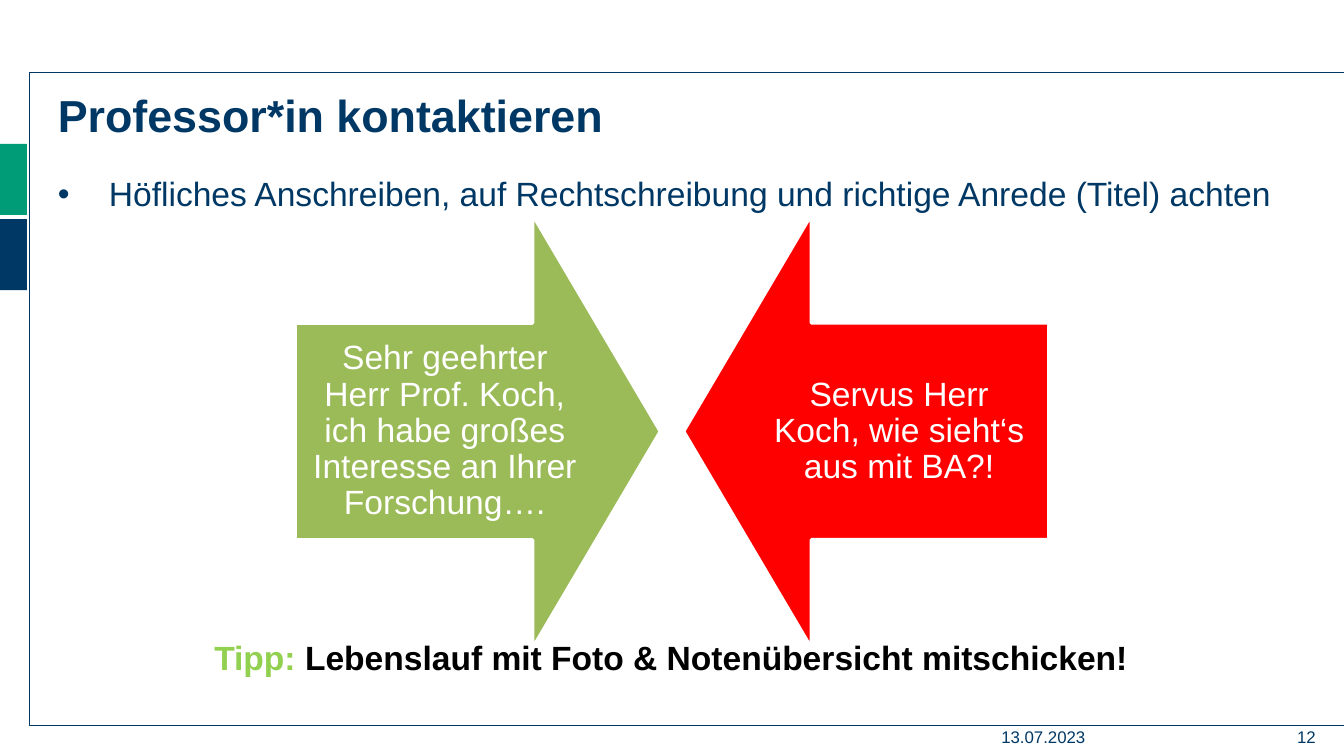
from dataclasses import dataclass

from lxml import etree
from pptx import Presentation
from pptx.dml.color import RGBColor
from pptx.enum import shapes, text
from pptx.oxml import ns
from pptx.util import Inches, Pt


@dataclass(frozen=True)
class Theme:
    font: str = "Arial"
    navy: str = "003865"
    teal: str = "009B77"
    green: str = "9BBB59"
    red: str = "FF0000"
    tip_green: str = "92D050"
    white: str = "FFFFFF"
    black: str = "000000"
    title_size: int = 24
    text_size: int = 18
    footer_size: int = 9


theme = Theme()


def format_text(shape, size, color, bold=False, align=text.PP_ALIGN.LEFT,
                anchor=text.MSO_ANCHOR.TOP, margin=0):
    frame = shape.text_frame
    frame.word_wrap = True
    frame.auto_size = text.MSO_AUTO_SIZE.NONE
    frame.vertical_anchor = anchor
    frame.margin_left = frame.margin_right = Inches(margin)
    frame.margin_top = frame.margin_bottom = Inches(margin)
    for paragraph in frame.paragraphs:
        paragraph.alignment = align
        paragraph.space_before = Pt(0)
        for run in paragraph.runs:
            run.font.name = theme.font
            run.font.size = Pt(size)
            run.font.bold = bold
            run.font.color.rgb = RGBColor.from_string(color)


def place(shape, left, top, width, height):
    shape.left, shape.top = Inches(left), Inches(top)
    shape.width, shape.height = Inches(width), Inches(height)


presentation = Presentation()
presentation.slide_width = Inches(10)
presentation.slide_height = Inches(10 * 9 / 16)
slide = presentation.slides.add_slide(presentation.slide_layouts[1])

# Side blocks and frame
for top, color in ((1.63, theme.navy), (1.07, theme.teal)):
    block = slide.shapes.add_shape(shapes.MSO_SHAPE.RECTANGLE, Inches(0), Inches(top),
                                   Inches(0.2), Inches(0.53))
    block.shadow.inherit = False
    block.fill.solid()
    block.fill.fore_color.rgb = RGBColor.from_string(color)
    block.line.fill.background()

builder = slide.shapes.build_freeform(Inches(10), Inches(0.54))
builder.add_line_segments([(Inches(0.22), Inches(0.54)), (Inches(0.22), Inches(5.4)),
                           (Inches(10), Inches(5.4))], close=False)
frame_line = builder.convert_to_shape()
frame_line.shadow.inherit = False
frame_line.fill.background()
frame_line.line.color.rgb = RGBColor.from_string(theme.navy)
frame_line.line.width = Pt(0.75)

# Title and bullet
title = slide.shapes.title
place(title, 0.43, 0.65, 9.3, 0.45)
title.text_frame.text = "Professor*in kontaktieren"
format_text(title, theme.title_size, theme.navy, bold=True)

body = slide.placeholders[1]
place(body, 0.43, 1.29, 9.3, 0.4)
body.text_frame.text = ("Höfliches Anschreiben, auf Rechtschreibung und "
                        "richtige Anrede (Titel) achten")
properties = body.text_frame.paragraphs[0]._p.get_or_add_pPr()
properties.set("marL", str(Inches(0.38)))
properties.set("indent", str(-Inches(0.38)))
etree.SubElement(properties, ns.qn("a:buChar")).set("char", "•")
format_text(body, theme.text_size, theme.navy)

# Good and bad example as opposing arrows
examples = (
    (1.94, 270, theme.green, 2.19,
     "Sehr geehrter Herr Prof. Koch, ich habe großes Interesse an Ihrer Forschung…."),
    (4.83, 90, theme.red, 5.57, "Servus Herr Koch, wie sieht‘s aus mit BA?!"),
)
for arrow_left, rotation, color, text_left, wording in examples:
    arrow = slide.shapes.add_shape(shapes.MSO_SHAPE.DOWN_ARROW, Inches(arrow_left),
                                   Inches(1.85), Inches(3.23), Inches(2.72))
    arrow.rotation = rotation
    arrow.adjustments[0], arrow.adjustments[1] = 0.5, 0.35
    arrow.shadow.inherit = False
    arrow.fill.solid()
    arrow.fill.fore_color.rgb = RGBColor.from_string(color)
    arrow.line.color.rgb = RGBColor.from_string(theme.white)
    arrow.line.width = Pt(2)

    example = slide.shapes.add_textbox(Inches(text_left), Inches(2.4),
                                       Inches(2.24), Inches(1.62))
    example.text_frame.text = wording
    format_text(example, theme.text_size, theme.white, align=text.PP_ALIGN.CENTER,
                anchor=text.MSO_ANCHOR.MIDDLE, margin=0.14)
    example.text_frame.paragraphs[0].line_spacing = 0.9

# Tip
tip = slide.shapes.add_textbox(Inches(1.45), Inches(4.69), Inches(7.09), Inches(0.4))
tip.text_frame.text = "Tipp: "
tip_rest = tip.text_frame.paragraphs[0].add_run()
tip_rest.text = "Lebenslauf mit Foto & Notenübersicht mitschicken!"
format_text(tip, theme.text_size, theme.tip_green, bold=True,
            align=text.PP_ALIGN.CENTER, margin=0.05)
tip_rest.font.color.rgb = RGBColor.from_string(theme.black)

# Footer
for left, width, wording, align in (
    (7.45, 1.18, "13.07.2023", text.PP_ALIGN.LEFT),
    (9, 0.79, "12", text.PP_ALIGN.RIGHT),
):
    footer = slide.shapes.add_textbox(Inches(left), Inches(5.41), Inches(width), Inches(0.16))
    footer.text_frame.text = wording
    format_text(footer, theme.footer_size, theme.navy, align=align)

presentation.save("out.pptx")
